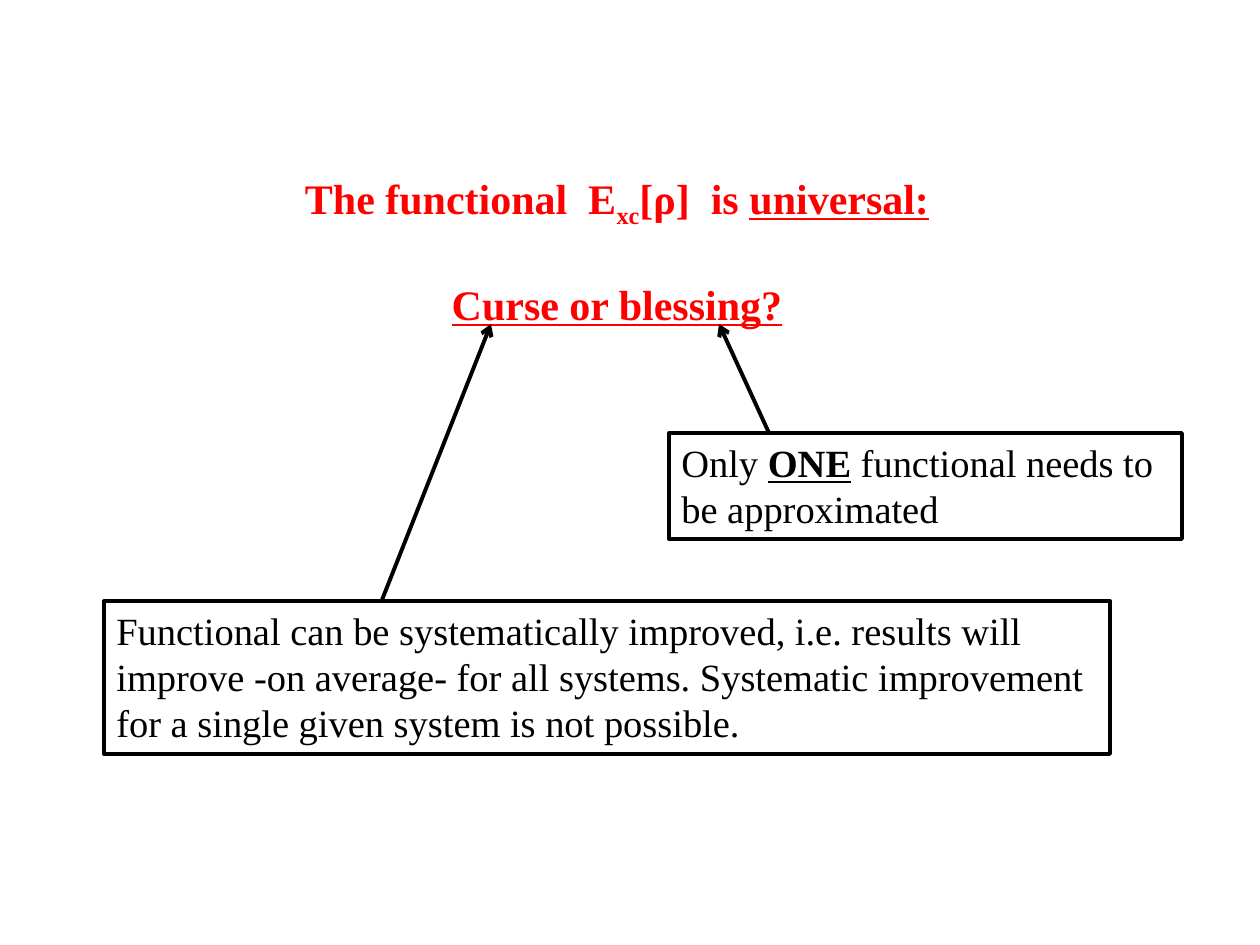
from dataclasses import dataclass

from lxml import etree
from pptx import Presentation
from pptx.dml.color import RGBColor
from pptx.enum.shapes import MSO_CONNECTOR, MSO_SHAPE
from pptx.enum.text import MSO_ANCHOR, MSO_AUTO_SIZE, PP_ALIGN
from pptx.oxml.ns import qn
from pptx.util import Inches, Pt

RECTANGLE = MSO_SHAPE.RECTANGLE
STRAIGHT = MSO_CONNECTOR.STRAIGHT
MIDDLE, TOP = MSO_ANCHOR.MIDDLE, MSO_ANCHOR.TOP
CENTER, LEFT = PP_ALIGN.CENTER, PP_ALIGN.LEFT
NO_AUTOFIT = MSO_AUTO_SIZE.NONE
TITLE_ONLY = 5
PX_PER_INCH = 126


@dataclass(frozen=True)
class Theme:
    font: str = "Times New Roman"
    title_color: RGBColor = RGBColor(0xFF, 0x00, 0x00)
    ink: RGBColor = RGBColor(0x00, 0x00, 0x00)
    title_size: Pt = Pt(24)
    note_size: Pt = Pt(22)
    title_gap: Pt = Pt(27.6)
    line_width: Pt = Pt(2.25)


THEME = Theme()


def px(length):
    return round(Inches(1) * length / PX_PER_INCH)


def write_lines(frame, lines, size, color, align, bold=False):
    """Write one paragraph per line; a line is a list of (text, style names)."""
    for index, pieces in enumerate(lines):
        paragraph = frame.paragraphs[0] if index == 0 else frame.add_paragraph()
        paragraph.alignment = align
        for text, styles in pieces:
            run = paragraph.add_run()
            run.text = text
            font = run.font
            font.name, font.size = THEME.font, size
            font.color.rgb = color
            font.bold = bold or "bold" in styles
            font.underline = "underline" in styles
            if "subscript" in styles:
                run._r.get_or_add_rPr().set("baseline", "-25000")


def fill_title(title, box, lines):
    title.left, title.top, title.width, title.height = map(px, box)
    frame = title.text_frame
    frame.auto_size = NO_AUTOFIT
    frame.word_wrap = False
    frame.vertical_anchor = MIDDLE
    write_lines(frame, lines, THEME.title_size, THEME.title_color, CENTER, bold=True)
    frame.paragraphs[-1].space_before = THEME.title_gap


def style_line(line):
    line.color.rgb = THEME.ink
    line.width = THEME.line_width


def add_note(slide, box, lines):
    note = slide.shapes.add_shape(RECTANGLE, *map(px, box))
    note.shadow.inherit = False
    note.fill.background()
    style_line(note.line)
    note.text_frame.word_wrap = True
    note.text_frame.vertical_anchor = TOP
    write_lines(note.text_frame, lines, THEME.note_size, THEME.ink, LEFT)


def add_arrow(slide, start, end):
    arrow = slide.shapes.add_connector(STRAIGHT, *map(px, start + end))
    style_line(arrow.line)
    etree.SubElement(arrow.line._get_or_add_ln(), qn("a:tailEnd"), type="arrow")
    etree.SubElement(arrow._element.spPr, qn("a:effectLst"))


def main():
    presentation = Presentation()
    presentation.slide_width, presentation.slide_height = Inches(10), Inches(7.5)
    slide = presentation.slides.add_slide(presentation.slide_layouts[TITLE_ONLY])

    fill_title(slide.shapes.title, (287, 168, 660, 165), [
        [("The functional  E", ()), ("xc", ("subscript",)),
         ("[ρ]  is ", ()), ("universal:", ("underline",))],
        [("Curse or blessing?", ("underline",))],
    ])

    add_note(slide, (669, 433, 513, 106), [
        [("Only ", ()), ("ONE", ("bold", "underline")), (" functional needs to", ())],
        [("be approximated", ())],
    ])
    add_arrow(slide, (769, 433), (719, 324))

    add_note(slide, (104, 601, 1006, 153), [
        [("Functional can be systematically improved, i.e. results will", ())],
        [("improve -on average- for all systems. Systematic improvement", ())],
        [("for a single given system is not possible.", ())],
    ])
    add_arrow(slide, (382, 600), (491, 324))

    presentation.save("out.pptx")


if __name__ == "__main__":
    main()
